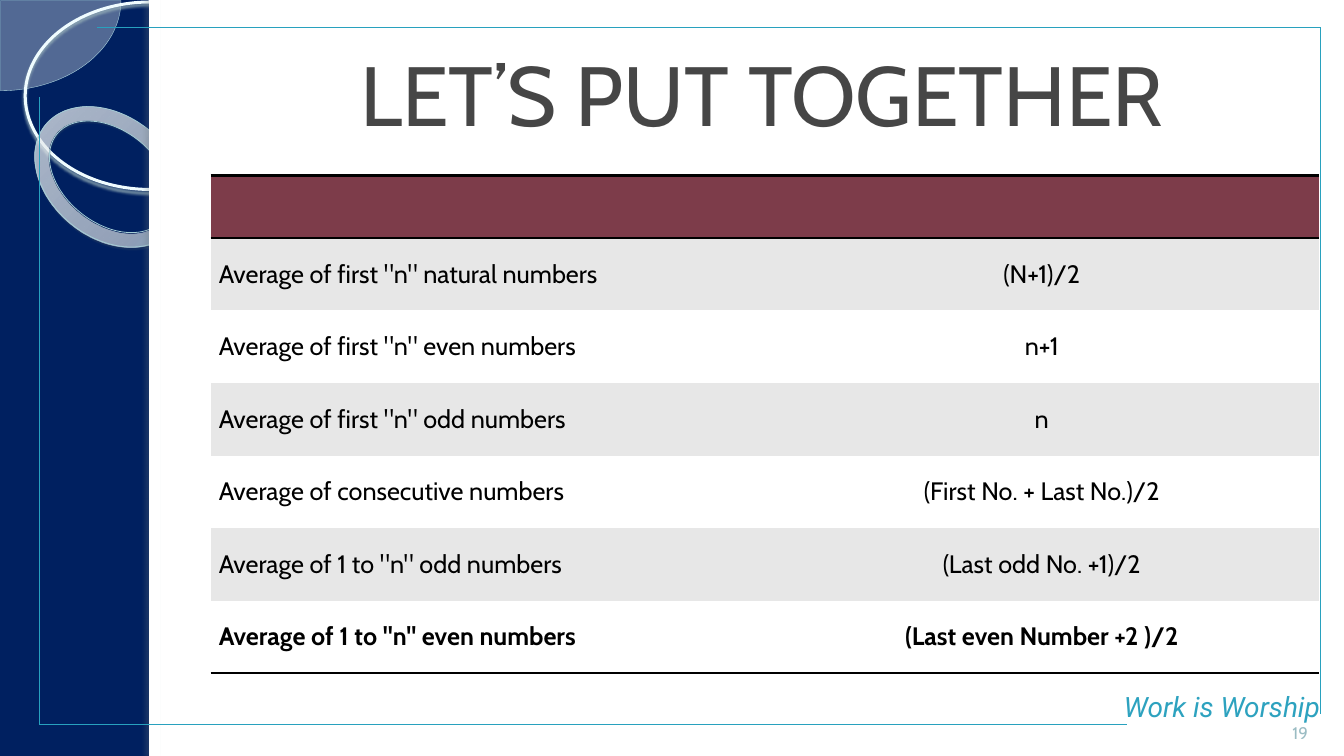
"""Builds the summary slide of average formulas."""
from lxml import etree
from pptx import Presentation
from pptx.dml.color import RGBColor
from pptx.enum.shapes import MSO_CONNECTOR, MSO_SHAPE
from pptx.enum.text import MSO_ANCHOR, MSO_AUTO_SIZE, PP_ALIGN
from pptx.oxml import parse_xml
from pptx.oxml.ns import nsdecls, qn
from pptx.util import Inches, Pt

NAVY = RGBColor(0x00, 0x20, 0x60)
WHITE = RGBColor(0xFF, 0xFF, 0xFF)
BLACK = RGBColor(0x00, 0x00, 0x00)
ICE = RGBColor(0xF9, 0xFE, 0xFF)
PIE_EDGE = RGBColor(0xB2, 0xDA, 0xE2)
HOOP = RGBColor(0xEF, 0xFC, 0xFF)
HOOP_SHADOW = RGBColor(0x9F, 0xB9, 0xBE)
RING_EDGE = RGBColor(0xA4, 0xCD, 0xD6)
RING_SHADOW = RGBColor(0x4C, 0x5D, 0x61)
PANEL_SHADOW = RGBColor(0x6E, 0x7A, 0x7D)
FRAME = RGBColor(0x28, 0xA1, 0xBE)
MOTTO = RGBColor(0x2D, 0xA2, 0xBF)
TITLE = RGBColor(0x46, 0x46, 0x46)
PAGE = RGBColor(0x9A, 0xBC, 0xC3)
MAROON = RGBColor(0x7D, 0x3C, 0x4A)
BAND = RGBColor(0xE7, 0xE7, 0xE7)

RING_STOPS = [(0, "F9FEFF", 70), (70, "FDFFFF", 55), (100, "A3EEFE", 60)]
PLAIN_TABLE = "{2D5ABB26-0587-4C30-8999-92F81FD0307C}"
FORMULAS = [
    ('Average of first "n" natural numbers', "(N+1)/2"),
    ('Average of first "n" even numbers', "n+1"),
    ('Average of first "n" odd numbers', "n"),
    ("Average of consecutive numbers", "(First No. + Last No.)/2"),
    ('Average of 1 to "n" odd numbers', "(Last odd No. +1)/2"),
    ('Average of 1 to "n" even numbers', "(Last even Number +2 )/2"),
]
FRAME_LINES = [
    (0.96, 0.27, 13.1, 0.27),
    (13.1, 0.27, 13.1, 7.08),
    (0.39, 0.96, 0.39, 7.19),
    (0.39, 7.19, 11.18, 7.19),
]


class SlideBuilder:
    def __init__(self, presentation, font="Cabin"):
        self.slide = presentation.slides.add_slide(presentation.slide_layouts[5])
        self.font = font

    def background(self, color):
        fill = self.slide.background.fill
        fill.solid()
        fill.fore_color.rgb = color

    def shape(self, kind, box, fill=None, alpha=None, line=None, shadow=None,
              adjustments=(), rotation=0):
        shape = self.slide.shapes.add_shape(kind, *map(Inches, box))
        shape.shadow.inherit = False
        shape.rotation = rotation
        for index, value in enumerate(adjustments):
            shape.adjustments[index] = value
        if fill is None:
            shape.fill.background()
        else:
            shape.fill.solid()
            shape.fill.fore_color.rgb = fill
        if alpha is not None:
            color = shape.element.spPr.find(qn("a:solidFill")).find(qn("a:srgbClr"))
            etree.SubElement(color, qn("a:alpha"), val=str(alpha * 1000))
        if line is None:
            shape.line.fill.background()
        else:
            shape.line.color.rgb, shape.line.width = line[0], Pt(line[1])
        if shadow is not None:
            self.cast_shadow(shape, *shadow)
        return shape

    def cast_shadow(self, shape, color, alpha, blur, distance, angle):
        effects = shape.element.spPr.find(qn("a:effectLst"))
        effects.append(parse_xml(
            f'<a:outerShdw {nsdecls("a")} blurRad="{Pt(blur)}" dist="{Pt(distance)}" '
            f'dir="{angle * 60000}" algn="tl" rotWithShape="0"><a:srgbClr val="{color}">'
            f'<a:alpha val="{alpha * 1000}"/></a:srgbClr></a:outerShdw>'))

    def radial_fill(self, shape, stops, left, top, right, bottom):
        stop_xml = "".join(
            f'<a:gs pos="{position * 1000}"><a:srgbClr val="{color}">'
            f'<a:alpha val="{alpha * 1000}"/></a:srgbClr></a:gs>'
            for position, color, alpha in stops)
        gradient = parse_xml(
            f'<a:gradFill {nsdecls("a")} rotWithShape="1"><a:gsLst>{stop_xml}</a:gsLst>'
            f'<a:path path="circle"><a:fillToRect l="{left * 1000}" t="{top * 1000}" '
            f'r="{right * 1000}" b="{bottom * 1000}"/></a:path></a:gradFill>')
        properties = shape.element.spPr
        properties.replace(properties.find(qn("a:noFill")), gradient)

    def line(self, points, color, width):
        connector = self.slide.shapes.add_connector(
            MSO_CONNECTOR.STRAIGHT, *map(Inches, points))
        connector.line.color.rgb, connector.line.width = color, Pt(width)
        etree.SubElement(connector.element.spPr, qn("a:effectLst"))

    def fill_text(self, frame, text, size, color, align=PP_ALIGN.CENTER, font=None,
                  bold=False, italic=False):
        paragraph = frame.paragraphs[0]
        paragraph.alignment = align
        run = paragraph.add_run()
        run.text = text
        run.font.name, run.font.size = font or self.font, Pt(size)
        run.font.bold, run.font.italic = bold, italic
        run.font.color.rgb = color

    def text(self, box, text, size, color, anchor=MSO_ANCHOR.TOP, **style):
        frame = self.slide.shapes.add_textbox(*map(Inches, box)).text_frame
        frame.word_wrap = True
        frame.vertical_anchor = anchor
        self.fill_text(frame, text, size, color, **style)

    def title(self, box, text, size, color):
        title = self.slide.shapes.title
        title.left, title.top, title.width, title.height = map(Inches, box)
        title.element.getparent().append(title.element)
        frame = title.text_frame
        frame.auto_size = MSO_AUTO_SIZE.NONE
        frame.vertical_anchor = MSO_ANCHOR.MIDDLE
        self.fill_text(frame, text, size, color)

    def border(self, cell, sides):
        for index, side in enumerate(sides):
            cell._tc.get_or_add_tcPr().insert(index, parse_xml(
                f'<a:ln{side} {nsdecls("a")} w="{Pt(2)}"><a:solidFill>'
                f'<a:srgbClr val="{BLACK}"/></a:solidFill></a:ln{side}>'))

    def table(self, box, rows, header_height, row_height):
        table = self.slide.shapes.add_table(
            len(rows) + 1, 2, *map(Inches, box)).table
        table.first_row = table.horz_banding = False
        table._tbl.tblPr.find(qn("a:tableStyleId")).text = PLAIN_TABLE
        for row in table.rows:
            row.height = Inches(row_height)
        table.rows[0].height = Inches(header_height)
        for cell in table.rows[0].cells:
            cell.fill.solid()
            cell.fill.fore_color.rgb = MAROON
            self.border(cell, "TB")
        for number, texts in enumerate(rows, 1):
            last = number == len(rows)
            for column, text in enumerate(texts):
                cell = table.cell(number, column)
                cell.fill.solid()
                cell.fill.fore_color.rgb = BAND if number % 2 else WHITE
                cell.vertical_anchor = MSO_ANCHOR.MIDDLE
                cell.margin_left = cell.margin_right = Inches(0.08)
                cell.margin_top = cell.margin_bottom = Inches(0.08)
                align = PP_ALIGN.CENTER if column else PP_ALIGN.LEFT
                self.fill_text(cell.text_frame, text, 18, BLACK, align, bold=last)
                if last:
                    self.border(cell, "B")


def main():
    presentation = Presentation()
    presentation.slide_width, presentation.slide_height = Inches(13.33), Inches(7.5)
    builder = SlideBuilder(presentation)
    builder.background(NAVY)
    builder.shape(MSO_SHAPE.PIE, (-1.19, -0.89, 2.39, 1.79), ICE, 33,
                  (PIE_EDGE, 0.25), adjustments=(0, 54.02))
    builder.shape(MSO_SHAPE.OVAL, (0.25, 0.02, 2.48, 1.86), line=(HOOP, 2.15),
                  shadow=(HOOP_SHADOW, 85, 2, 2, 90))
    ring = builder.shape(MSO_SHAPE.DONUT, (0.27, 1.15, 1.64, 1.21),
                         line=(RING_EDGE, 0.58), shadow=(RING_SHADOW, 35, 1, 1.2, 75),
                         adjustments=(0.12,), rotation=38.6)
    builder.radial_fill(ring, RING_STOPS, -408, -50, 508, 150)
    builder.shape(MSO_SHAPE.RECTANGLE, (1.48, 0, 11.85, 7.5), WHITE)
    builder.shape(MSO_SHAPE.RECTANGLE, (1.48, 0, 0.11, 7.5), WHITE,
                  shadow=(PANEL_SHADOW, 25, 3, 3, 180))
    for points in FRAME_LINES:
        builder.line(points, FRAME, 0.75)
    builder.text((10.91, 6.79, 2.42, 0.44), "Work is Worship", 20, MOTTO,
                 font="Roboto", italic=True)
    builder.title((2.09, 0.3, 10.93, 1.25), "LET’S PUT TOGETHER", 60, TITLE)
    builder.table((2.09, 1.74, 10.99, 4.95), FORMULAS, 0.62, 0.72)
    builder.text((12.56, 6.9, 0.67, 0.52), "19", 12, PAGE, MSO_ANCHOR.BOTTOM)
    presentation.save("out.pptx")


if __name__ == "__main__":
    main()
